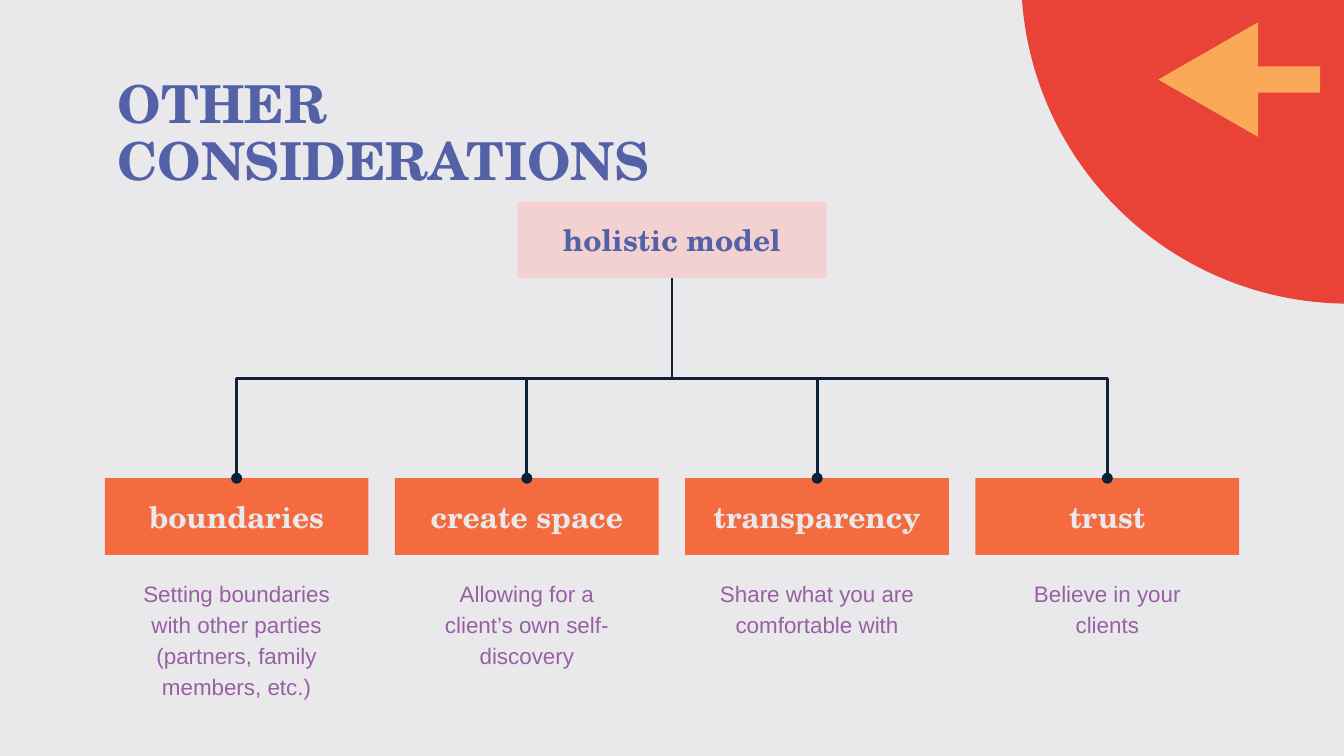
from math import cos, pi, sin

from lxml import etree
from pptx import Presentation
from pptx import util as u
from pptx.dml.color import RGBColor
from pptx.enum import shapes, text
from pptx.oxml.ns import qn

COLORS = {
    "background": "E9E9EC", "disc": "E84336", "arrow": "F9A958",
    "title": "5461A7", "root": "F4D1D1", "root_label": "5362A7",
    "branch": "F36B3F", "branch_label": "E9E9EC", "detail": "9760A2",
    "line": "0E203A",
}
SERIF, SANS = "TeX Gyre Schola", "Arial"
INSET = u.Cm(0.25)
FRAME = {"word_wrap": True, "margin_left": INSET, "margin_right": INSET,
         "margin_top": INSET, "margin_bottom": INSET}
TITLE_FONT = {"name": SERIF, "size": u.Pt(28), "bold": True}
LABEL_FONT = {"name": SERIF, "size": u.Pt(16), "bold": True}
DETAIL_FONT = {"name": SANS, "size": u.Pt(12), "bold": False}
CENTERED = {"alignment": text.PP_ALIGN.CENTER}

BRANCHES = [
    ("boundaries", "Setting boundaries with other parties (partners, family members, etc.)"),
    ("create space", "Allowing for a client’s own self-discovery"),
    ("transparency", "Share what you are comfortable with"),
    ("trust", "Believe in your clients"),
]


def rgb(name):
    return RGBColor.from_string(COLORS[name])


def apply(target, values):
    for attribute, value in values.items():
        setattr(target, attribute, value)


def paint(shape, color):
    shape.shadow.inherit = False
    shape.fill.solid()
    shape.fill.fore_color.rgb = rgb(color)
    shape.line.fill.background()


def write(shape, words, font, color, paragraph_format, anchor=text.MSO_ANCHOR.TOP):
    frame = shape.text_frame
    apply(frame, {**FRAME, "vertical_anchor": anchor})
    paragraph = frame.paragraphs[0]
    apply(paragraph, paragraph_format)
    run = paragraph.add_run()
    run.text = words
    apply(run.font, font)
    run.font.color.rgb = rgb(color)


def add_rectangle(slide, box, color):
    rectangle = slide.shapes.add_shape(shapes.MSO_SHAPE.RECTANGLE, *map(u.Cm, box))
    paint(rectangle, color)
    return rectangle


def add_polygon(slide, points, color):
    start, *rest = [(u.Cm(x), u.Cm(y)) for x, y in points]
    builder = slide.shapes.build_freeform(*start)
    builder.add_line_segments(rest)
    paint(builder.convert_to_shape(), color)


def add_half_disc(slide, box):
    """Fill the box with the left half of a disc."""
    left, top, width, height = box
    steps = 120
    angles = [pi / 2 + pi * step / steps for step in range(steps + 1)]
    add_polygon(slide, [(left + width * (1 + cos(a)), top + height / 2 * (1 + sin(a)))
                        for a in angles], "disc")


def add_arrow(slide, box):
    """Fill the box with an arrow that points left."""
    left, top, width, height = box
    head, shaft = 1.89, 0.5
    middle = top + height / 2
    add_polygon(slide, [(left, middle), (left + head, top), (left + head, top + height)], "arrow")
    shaft_left = left + 1.3
    add_rectangle(slide, (shaft_left, middle - shaft / 2, left + width - shaft_left, shaft), "arrow")


def add_title(slide, box):
    title = slide.shapes.add_textbox(*map(u.Cm, box))
    write(title, "OTHER CONSIDERATIONS", TITLE_FONT, "title", {"line_spacing": 0.9})


def add_label(slide, box, words, fill, color):
    label = add_rectangle(slide, box, fill)
    write(label, words, LABEL_FONT, color, CENTERED, text.MSO_ANCHOR.MIDDLE)


def add_branch(slide, box, label, detail):
    """Place a heading in the box and its detail text below."""
    left, top, width, height = box
    add_label(slide, box, label, "branch", "branch_label")
    margin = 0.36
    detail_box = (left + margin, top + height + 0.15, width - 2 * margin, height)
    write(slide.shapes.add_textbox(*map(u.Cm, detail_box)), detail, DETAIL_FONT, "detail",
          {**CENTERED, "line_spacing": 1.15, "space_after": u.Pt(12)})


def add_elbow(slide, start, end):
    """Join two points by a down-across-down line that ends in a dot."""
    (x1, y1), (x2, y2) = start, end
    goes_right = x2 > x1
    # The elbow runs sideways until turned, so its box has width and height swapped.
    center_x, center_y = (x1 + x2) / 2, (y1 + y2) / 2
    half_width, half_height = (y2 - y1) / 2, abs(x2 - x1) / 2
    near, far = center_x - half_width, center_x + half_width
    if goes_right:
        near, far = far, near
    elbow = slide.shapes.add_connector(
        shapes.MSO_CONNECTOR.ELBOW, u.Cm(near), u.Cm(center_y - half_height),
        u.Cm(far), u.Cm(center_y + half_height))
    elbow.line.color.rgb = rgb("line")
    elbow.line.width = u.Pt(1.5)
    properties = elbow._element.spPr
    properties.find(qn("a:xfrm")).set("rot", str((270 if goes_right else 90) * 60000))
    etree.SubElement(properties.find(qn("a:ln")), qn("a:tailEnd"), type="oval")
    etree.SubElement(properties, qn("a:effectLst"))


def add_tree(slide, box):
    """Place the root at the top of the box and the branches across its width."""
    left, top, width, _ = box
    label_height, root_width, gap = 1.45, 5.84, 0.5
    branch_top = top + 5.23
    center = left + width / 2
    add_label(slide, (center - root_width / 2, top, root_width, label_height),
              "holistic model", "root", "root_label")
    branch_width = (width - gap * (len(BRANCHES) - 1)) / len(BRANCHES)
    lefts = [left + i * (branch_width + gap) for i in range(len(BRANCHES))]
    for branch_left, (label, detail) in zip(lefts, BRANCHES):
        add_branch(slide, (branch_left, branch_top, branch_width, label_height), label, detail)
    for branch_left in lefts:
        add_elbow(slide, (center, top + label_height),
                  (branch_left + branch_width / 2, branch_top))


def main():
    presentation = Presentation()
    apply(presentation, {"slide_width": u.Cm(25.4), "slide_height": u.Cm(14.29)})
    slide = presentation.slides.add_slide(presentation.slide_layouts[6])
    slide.background.fill.solid()
    slide.background.fill.fore_color.rgb = rgb("background")
    add_half_disc(slide, (19.3, -6.63, 6.19, 12.37))
    add_arrow(slide, (21.89, 0.42, 3.06, 2.17))
    add_title(slide, (1.98, 1.24, 14.63, 1.6))
    add_tree(slide, (1.98, 3.81, 21.44, 9.5))
    presentation.save("out.pptx")


if __name__ == "__main__":
    main()
